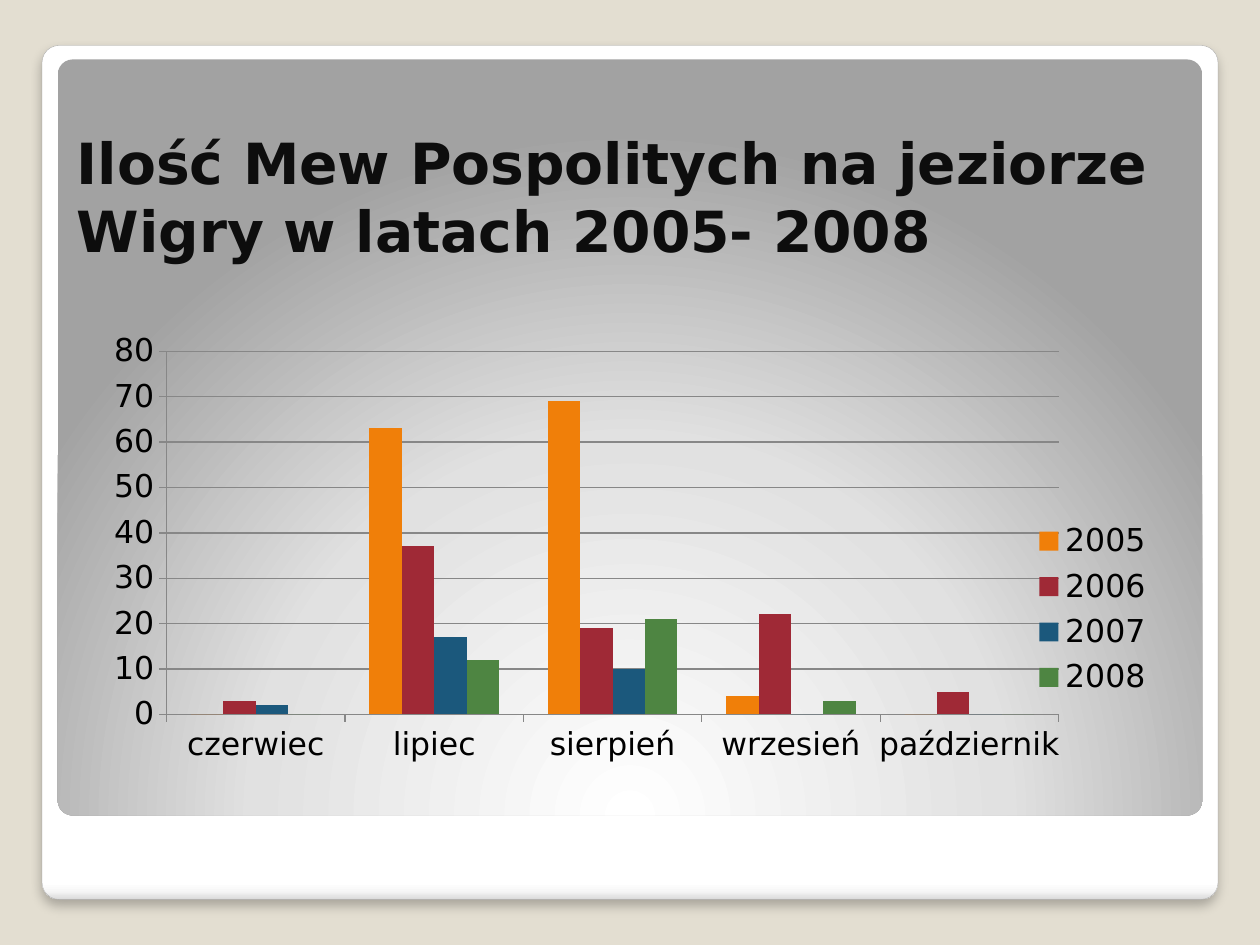
from lxml import etree
from pptx import Presentation
from pptx.chart.data import CategoryChartData
from pptx.dml.color import RGBColor
from pptx.enum.chart import XL_CHART_TYPE as ChartType, XL_LEGEND_POSITION as LegendPos
from pptx.enum.chart import XL_TICK_MARK as Tick
from pptx.enum.shapes import MSO_SHAPE as Shape
from pptx.enum.text import MSO_ANCHOR as Anchor
from pptx.oxml import parse_xml
from pptx.oxml.ns import nsdecls, qn
from pptx.util import Pt

FONT = "DejaVu Sans"
BEIGE = RGBColor(0xE3, 0xDE, 0xD1)
EDGE_GRAY = RGBColor(0xA4, 0xA4, 0xA4)
GRID_GRAY = RGBColor(0x87, 0x87, 0x87)
WHITE = RGBColor(0xFF, 0xFF, 0xFF)
NEAR_WHITE = RGBColor(0xF7, 0xF7, 0xF7)
RIM_GRAY = RGBColor(0xDA, 0xDA, 0xDA)
LIGHT_GRAY = RGBColor(0xE1, 0xE1, 0xE1)
MID_GRAY = RGBColor(0xA2, 0xA2, 0xA2)
INK = RGBColor(0x0D, 0x0D, 0x0D)
BLACK = RGBColor(0, 0, 0)
ORANGE = RGBColor(0xF0, 0x7F, 0x09)
RED = RGBColor(0x9F, 0x29, 0x36)
BLUE = RGBColor(0x1B, 0x58, 0x7C)
GREEN = RGBColor(0x4E, 0x85, 0x42)

DOWNWARD = '<a:lin ang="5400000" scaled="0"/>'
FROM_BOTTOM = ('<a:path path="circle"><a:fillToRect l="50000" t="175000" '
               'r="50000" b="-75000"/></a:path>')

MONTHS = ["czerwiec", "lipiec", "sierpień", "wrzesień", "październik"]
GULLS = [
    ("2005", ORANGE, (0, 63, 69, 4, 0)),
    ("2006", RED, (3, 37, 19, 22, 5)),
    ("2007", BLUE, (2, 17, 10, 0, 0)),
    ("2008", GREEN, (0, 12, 21, 3, 0)),
]


def write(frame, text, size=18, color=BLACK, bold=False):
    run = frame.paragraphs[0].add_run()
    run.text = text
    run.font.name, run.font.size = FONT, Pt(size)
    run.font.bold = bold
    run.font.color.rgb = color


def set_layout(owner, before, x, y, w, h, inner=False):
    """Place a chart part by fractions of the chart's size."""
    for old in owner.findall(qn("c:layout")):
        owner.remove(old)
    target = '<c:layoutTarget val="inner"/>' if inner else ""
    modes = '<c:xMode val="edge"/><c:yMode val="edge"/>'
    values = "".join(f'<c:{key} val="{value}"/>'
                     for key, value in zip("xywh", (x, y, w, h)))
    layout = parse_xml(f'<c:layout {nsdecls("c")}><c:manualLayout>{target}{modes}'
                       f'{values}</c:manualLayout></c:layout>')
    owner.insert(before, layout)


class GullSlide:
    def __init__(self, deck):
        self.slide = deck.slides.add_slide(deck.slide_layouts[6])
        background = self.slide.background.fill
        background.solid()
        background.fore_color.rgb = BEIGE

    def panel(self, left, top, width, height, stops, direction, edge=None, shadow=False):
        panel = self.slide.shapes.add_shape(
            Shape.ROUNDED_RECTANGLE, Pt(left), Pt(top), Pt(width), Pt(height))
        panel.adjustments[0] = 0.02
        panel.shadow.inherit = False
        if edge is None:
            panel.line.fill.background()
        else:
            panel.line.color.rgb = edge
            panel.line.width = Pt(0.16)
        colors = "".join(f'<a:gs pos="{pos * 1000}"><a:srgbClr val="{color}"/></a:gs>'
                         for pos, color in stops)
        gradient = parse_xml(f'<a:gradFill {nsdecls("a")} rotWithShape="1">'
                             f'<a:gsLst>{colors}</a:gsLst>{direction}</a:gradFill>')
        properties = panel.fill._xPr
        properties.find(qn("a:prstGeom")).addnext(gradient)
        if shadow:
            effects = properties.find(qn("a:effectLst"))
            outer = etree.SubElement(effects, qn("a:outerShdw"), blurRad=str(Pt(6)),
                                     dist=str(Pt(4)), dir="5400000", rotWithShape="0")
            black = etree.SubElement(outer, qn("a:srgbClr"), val="000000")
            etree.SubElement(black, qn("a:alpha"), val="25000")

    def title(self, text, left, top, width, height):
        box = self.slide.shapes.add_textbox(Pt(left), Pt(top), Pt(width), Pt(height))
        frame = box.text_frame
        frame.word_wrap = True
        frame.vertical_anchor = Anchor.BOTTOM
        write(frame, text, size=32.4, color=INK, bold=True)

    def column_chart(self, left, top, width, height):
        data = CategoryChartData()
        data.categories = MONTHS
        for year, _, counts in GULLS:
            data.add_series(year, counts)
        chart = self.slide.shapes.add_chart(
            ChartType.COLUMN_CLUSTERED, Pt(left), Pt(top), Pt(width), Pt(height), data).chart
        chart.has_title = False
        chart.font.name, chart.font.size = FONT, Pt(18)
        chart.font.color.rgb = BLACK

        # Columns
        plot = chart.plots[0]
        plot.vary_by_categories = False
        plot.gap_width, plot.overlap = 150, 0
        for series, (_, color, _) in zip(plot.series, GULLS):
            series.format.fill.solid()
            series.format.fill.fore_color.rgb = color

        # Axes
        counts_axis = chart.value_axis
        counts_axis.minimum_scale, counts_axis.maximum_scale = 0, 80
        counts_axis.major_unit = 10
        counts_axis.has_major_gridlines = True
        counts_axis.major_gridlines.format.line.color.rgb = GRID_GRAY
        for axis in (chart.category_axis, counts_axis):
            axis.major_tick_mark = Tick.CROSS if axis is None else Tick.OUTSIDE
            axis.format.line.color.rgb = GRID_GRAY

        # Legend over the right end of the plot
        chart.has_legend = True
        chart.legend.position = LegendPos.RIGHT
        chart.legend.include_in_layout = False
        set_layout(chart.legend._element, 1, 0.82, 0.33, 0.13, 0.33)
        plot_area = chart._chartSpace.chart.plotArea
        set_layout(plot_area, 0, 0.064, 0.048, 0.791, 0.629, inner=True)


def main():
    deck = Presentation()
    deck.slide_width, deck.slide_height = Pt(720), Pt(540)
    page = GullSlide(deck)

    # Framed background
    page.panel(24, 26, 672, 488,
               [(0, WHITE), (98, WHITE), (99, NEAR_WHITE), (100, RIM_GRAY)],
               DOWNWARD, edge=EDGE_GRAY, shadow=True)
    page.panel(33, 34, 654, 432,
               [(0, WHITE), (55, LIGHT_GRAY), (100, MID_GRAY)], FROM_BOTTOM)

    # Title and gull counts
    page.title("Ilość Mew Pospolitych na jeziorze Wigry w latach 2005- 2008",
               36.7, 71.3, 644.4, 82.8)
    page.column_chart(54, 185, 644.4, 329.8)

    deck.save("out.pptx")


if __name__ == "__main__":
    main()
